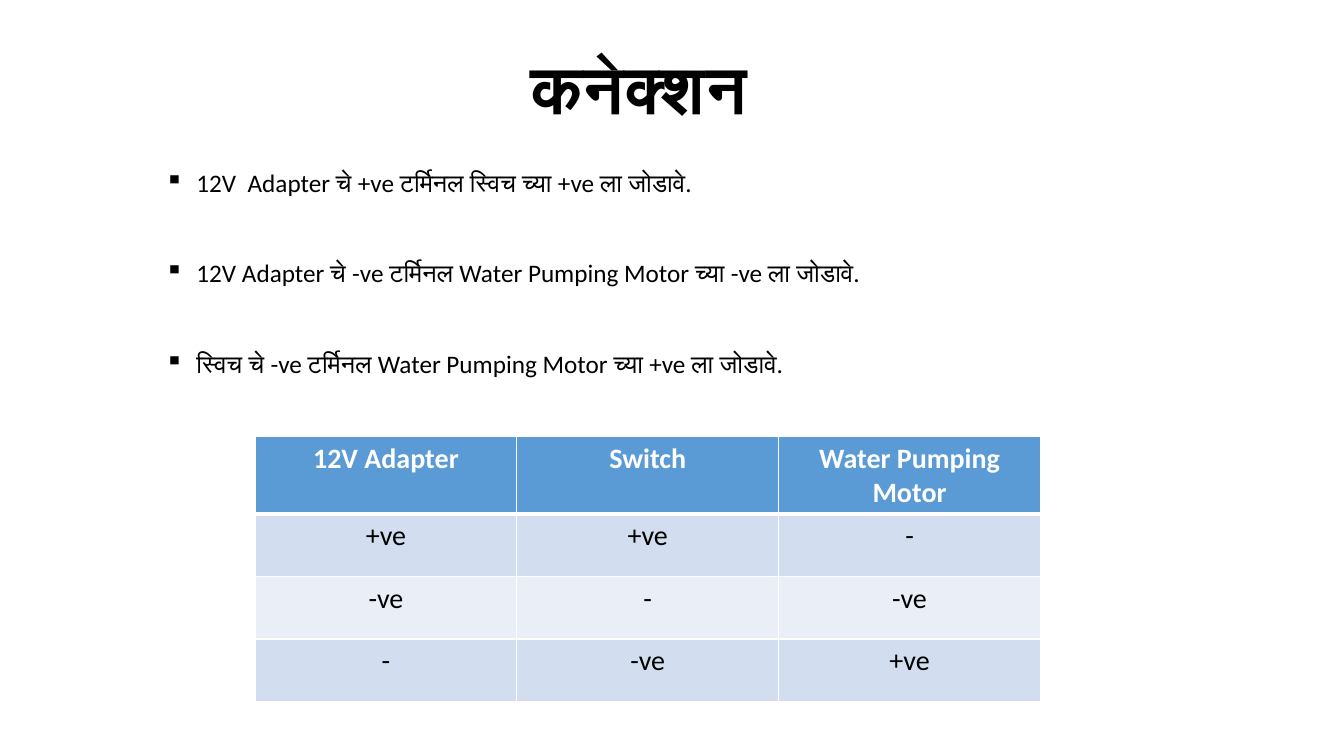
import pptx
import pptx.dml.color
import pptx.enum.text
import pptx.oxml
import pptx.oxml.ns
import pptx.util
from pptx.util import Inches

BLACK = pptx.dml.color.RGBColor(0x00, 0x00, 0x00)
WHITE = pptx.dml.color.RGBColor(0xFF, 0xFF, 0xFF)
HEADER_BLUE = pptx.dml.color.RGBColor(0x5B, 0x9B, 0xD5)
BAND_DARK = pptx.dml.color.RGBColor(0xD2, 0xDE, 0xEF)
BAND_LIGHT = pptx.dml.color.RGBColor(0xEA, 0xEF, 0xF7)
CENTER = pptx.enum.text.PP_ALIGN.CENTER

STEPS = [
    "12V  Adapter चे +ve टर्मिनल स्विच च्या +ve ला जोडावे.",
    "12V Adapter चे -ve टर्मिनल Water Pumping Motor च्या -ve ला जोडावे.",
    "स्विच चे -ve टर्मिनल Water Pumping Motor च्या +ve ला जोडावे.",
]
WIRING = [
    ["12V Adapter", "Switch", "Water Pumping Motor"],
    ["+ve", "+ve", "-"],
    ["-ve", "-", "-ve"],
    ["-", "-ve", "+ve"],
]


def write(paragraph, text, size=18, font="Calibri", color=BLACK, bold=False, align=None):
    run = paragraph.add_run()
    run.text = text
    run.font.size = pptx.util.Pt(size)
    run.font.name = font
    run.font.color.rgb = color
    run.font.bold = bold
    paragraph.alignment = align


def add_bullet(paragraph, mark, indent):
    properties = paragraph._p.get_or_add_pPr()
    properties.set("marL", str(indent))
    properties.set("indent", str(-indent))
    bullet = pptx.oxml.parse_xml(f'<a:buChar {pptx.oxml.ns.nsdecls("a")} char="{mark}"/>')
    properties.append(bullet)


def set_borders(cell, color, **widths):
    """Draw the cell's sides; widths holds points by side, in the order L, R, T, B."""
    properties = cell._tc.get_or_add_tcPr()
    for place, (side, width) in enumerate(widths.items()):
        line = pptx.oxml.parse_xml(
            f'<a:ln{side} {pptx.oxml.ns.nsdecls("a")} w="{pptx.util.Pt(width)}">'
            f'<a:solidFill><a:srgbClr val="{color}"/></a:solidFill></a:ln{side}>')
        properties.insert(place, line)


class ConnectionSlide:
    def __init__(self, slide):
        self.slide = slide
        self.bullet_indent = Inches(0.31)
        self.step_gap = pptx.util.Pt(43)

    def text_frame(self, left, top, width, height, wrap=True):
        box = self.slide.shapes.add_textbox(
            Inches(left), Inches(top), Inches(width), Inches(height))
        box.text_frame.word_wrap = wrap
        return box.text_frame

    def title(self, text, *place):
        frame = self.text_frame(*place, wrap=False)
        write(frame.paragraphs[0], text, size=48, font="Arial", bold=True, align=CENTER)

    def steps(self, texts, *place):
        frame = self.text_frame(*place)
        for number, text in enumerate(texts):
            step = frame.add_paragraph() if number else frame.paragraphs[0]
            write(step, text)
            if number:
                step.space_before = self.step_gap
            add_bullet(step, "▪", self.bullet_indent)

    def wiring_table(self, rows, left, top, width, header_height, row_height):
        height = header_height + row_height * (len(rows) - 1)
        table = self.slide.shapes.add_table(
            len(rows), len(rows[0]), Inches(left), Inches(top),
            Inches(width), Inches(height)).table
        for r, texts in enumerate(rows):
            is_header = r == 0
            table.rows[r].height = Inches(header_height if is_header else row_height)
            fill = HEADER_BLUE if is_header else BAND_DARK if r % 2 else BAND_LIGHT
            for c, text in enumerate(texts):
                cell = table.cell(r, c)
                cell.fill.solid()
                cell.fill.fore_color.rgb = fill
                write(cell.text_frame.paragraphs[0], text, size=20, bold=is_header,
                      color=WHITE if is_header else BLACK, align=CENTER)
                set_borders(cell, WHITE, L=1, R=1, T=3 if r == 1 else 1,
                            B=3 if is_header else 1)


def main():
    presentation = pptx.Presentation()
    presentation.slide_width = Inches(13.33)
    presentation.slide_height = Inches(7.5)
    page = ConnectionSlide(presentation.slides.add_slide(presentation.slide_layouts[6]))
    page.title("कनेक्शन ", 4.98, 0.41, 2.9, 0.91)
    page.steps(STEPS, 1.54, 1.61, 9.78, 2.83)
    page.wiring_table(WIRING, 2.53, 4.33, 7.79, header_height=0.77, row_height=0.62)
    presentation.save("out.pptx")


if __name__ == "__main__":
    main()
